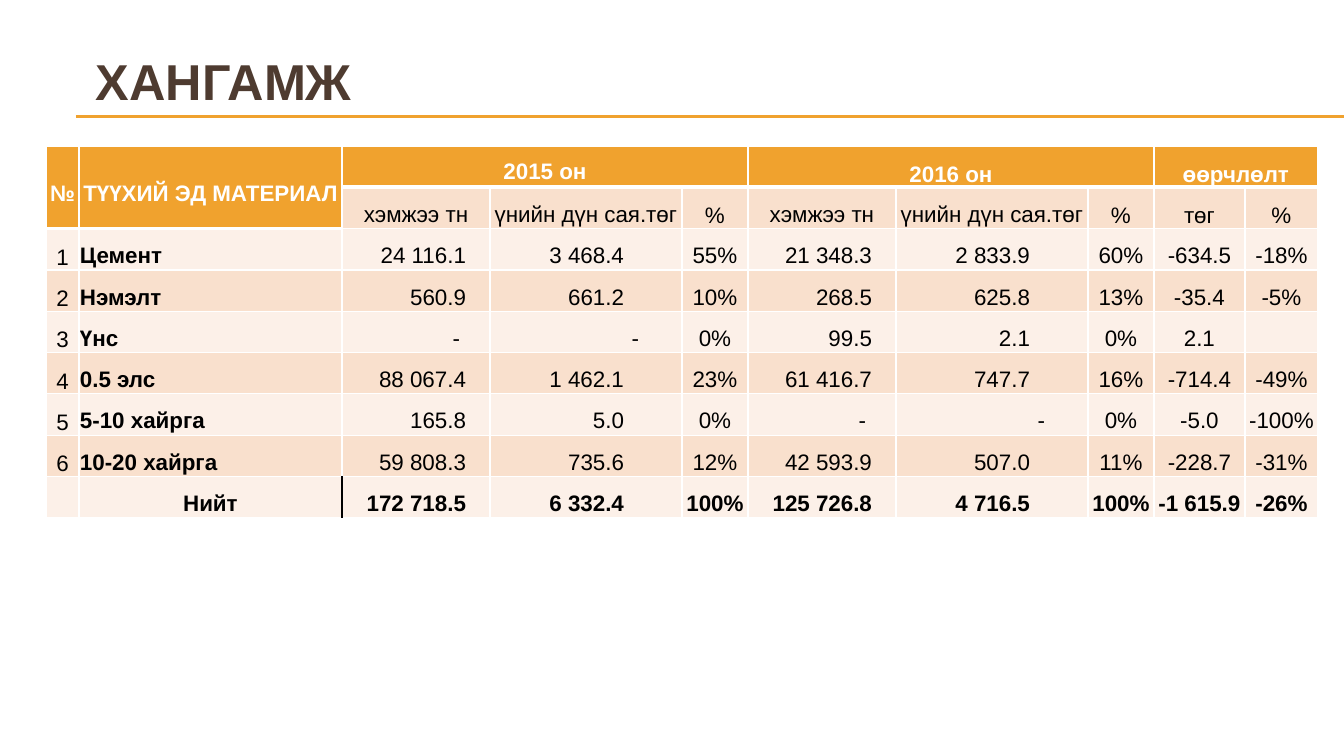
from typing import NamedTuple

from lxml.etree import SubElement
from pptx import Presentation
from pptx.dml.color import RGBColor
from pptx.enum.shapes import MSO_CONNECTOR
from pptx.enum.text import MSO_ANCHOR as ANCHOR, PP_ALIGN as ALIGN
from pptx.oxml.ns import qn
from pptx.util import Pt

EMU_PER_PX = 914400 / 100.8
FONT = "Arial"
ORANGE, PEACH, CREAM = "F0A22E", "F9E0CD", "FCF0E8"
WHITE, BLACK, BROWN = "FFFFFF", "000000", "4E3B30"

COL_WIDTHS = [33, 263, 148, 192, 66, 148, 192, 66, 91, 73]
ROW_HEIGHT = 41
TABLE_LEFT, TABLE_TOP = 46, 146
NAME_COL = 1
# Right margins of the figure columns, for numbers and for dashes
QUANTITY_MARGINS, AMOUNT_MARGINS = (24, 30), (58, 43)
FIGURE_MARGINS = {2: QUANTITY_MARGINS, 3: AMOUNT_MARGINS,
                  5: QUANTITY_MARGINS, 6: AMOUNT_MARGINS}


class Header(NamedTuple):
    text: str
    col: int
    rows: int
    cols: int
    anchor: ANCHOR


class Material(NamedTuple):
    number: str
    name: str
    figures: list[str]


class Rule(NamedTuple):
    left: int
    right: int
    y: int


HEADERS = [
    Header("№", 0, 2, 1, ANCHOR.MIDDLE),
    Header("ТҮҮХИЙ ЭД МАТЕРИАЛ", 1, 2, 1, ANCHOR.MIDDLE),
    Header("2015 он", 2, 1, 3, ANCHOR.TOP),
    Header("2016 он", 5, 1, 3, ANCHOR.BOTTOM),
    Header("өөрчлөлт", 8, 1, 2, ANCHOR.BOTTOM),
]
YEAR_HEADERS = ["хэмжээ тн", "үнийн дүн сая.төг", "%"]
SUBHEADERS = YEAR_HEADERS * 2 + ["төг", "%"]
MATERIALS = [
    Material("1", "Цемент", ["24 116.1", "3 468.4", "55%", "21 348.3", "2 833.9", "60%", "-634.5", "-18%"]),
    Material("2", "Нэмэлт", ["560.9", "661.2", "10%", "268.5", "625.8", "13%", "-35.4", "-5%"]),
    Material("3", "Үнс", ["-", "-", "0%", "99.5", "2.1", "0%", "2.1", ""]),
    Material("4", "0.5 элс", ["88 067.4", "1 462.1", "23%", "61 416.7", "747.7", "16%", "-714.4", "-49%"]),
    Material("5", "5-10 хайрга", ["165.8", "5.0", "0%", "-", "-", "0%", "-5.0", "-100%"]),
    Material("6", "10-20 хайрга", ["59 808.3", "735.6", "12%", "42 593.9", "507.0", "11%", "-228.7", "-31%"]),
    Material("", "Нийт", ["172 718.5", "6 332.4", "100%", "125 726.8", "4 716.5", "100%", "-1 615.9", "-26%"]),
]
RULES = [Rule(76, 1344, 116), Rule(76, 1344, 117)]
TOTAL_ROW = len(MATERIALS) + 1


def px(n: int) -> int:
    return round(n * EMU_PER_PX)


def rgb(color: str) -> RGBColor:
    return RGBColor.from_string(color)


def format_run(p, size: int, color: str, bold: bool) -> None:
    for r in p.runs:
        r.font.name, r.font.size, r.font.bold = FONT, Pt(size), bold
        r.font.color.rgb = rgb(color)


def draw_rule(slide, rule: Rule) -> None:
    line = slide.shapes.add_connector(
        MSO_CONNECTOR.STRAIGHT, px(rule.left), px(rule.y), px(rule.right), px(rule.y))
    line.line.color.rgb = rgb(ORANGE)
    line.line.width = Pt(0.75)
    SubElement(line._element.spPr, qn("a:effectLst"))


def draw_title(slide, text: str) -> None:
    tf = slide.shapes.add_textbox(px(86), px(34), px(1258), px(93)).text_frame
    tf.word_wrap = True
    tf.vertical_anchor = ANCHOR.MIDDLE
    tf.text = text
    format_run(tf.paragraphs[0], 36, BROWN, True)


def set_borders(cell, row: int, col: int) -> None:
    """White grid, thick under the header, black before the total's figures."""
    under_header = 1 if col <= NAME_COL else 0
    edges = {
        "lnL": (BLACK if (row, col) == (TOTAL_ROW, NAME_COL + 1) else WHITE, 1),
        "lnR": (BLACK if (row, col) == (TOTAL_ROW, NAME_COL) else WHITE, 1),
        "lnT": (WHITE, 3 if row == under_header + 1 else 1),
        "lnB": (WHITE, 3 if row <= under_header else 1),
    }
    tc_pr = cell._tc.get_or_add_tcPr()
    for tag, (color, width) in edges.items():
        ln = SubElement(tc_pr, qn(f"a:{tag}"), w=str(Pt(width)))
        SubElement(SubElement(ln, qn("a:solidFill")), qn("a:srgbClr"), val=color)


def fill_cell(cell, text: str, color: str = BLACK, bold: bool = False,
              align: ALIGN = ALIGN.CENTER, anchor: ANCHOR = ANCHOR.MIDDLE,
              right: int = 1) -> None:
    cell.margin_left = cell.margin_top = px(1)
    cell.margin_right, cell.margin_bottom = px(right), 0
    cell.vertical_anchor = anchor
    cell.text = text
    p = cell.text_frame.paragraphs[0]
    p.alignment, p.line_spacing = align, 1.5
    format_run(p, 16, color, bold)


def draw_material(table, row: int, material: Material) -> None:
    total = row == TOTAL_ROW
    fill_cell(table.cell(row, 0), material.number, anchor=ANCHOR.BOTTOM)
    fill_cell(table.cell(row, NAME_COL), material.name, bold=True,
              align=ALIGN.CENTER if total else ALIGN.LEFT)
    for col, text in enumerate(material.figures, NAME_COL + 1):
        cell = table.cell(row, col)
        if col in FIGURE_MARGINS:
            number, dash = FIGURE_MARGINS[col]
            fill_cell(cell, text, bold=total, align=ALIGN.RIGHT,
                      right=dash if text == "-" else number)
        else:
            fill_cell(cell, text, bold=total)


def draw_table(slide) -> None:
    n_rows = TOTAL_ROW + 1
    table = slide.shapes.add_table(
        n_rows, len(COL_WIDTHS), px(TABLE_LEFT), px(TABLE_TOP),
        px(sum(COL_WIDTHS)), px(n_rows * ROW_HEIGHT)).table
    table.first_row = table.horz_banding = False
    for column, width in zip(table.columns, COL_WIDTHS):
        column.width = px(width)
    for i, row in enumerate(table.rows):
        row.height = px(ROW_HEIGHT)
        for j, cell in enumerate(row.cells):
            set_borders(cell, i, j)
            in_header = i == 0 or (i == 1 and j <= NAME_COL)
            cell.fill.solid()
            cell.fill.fore_color.rgb = rgb(ORANGE if in_header else PEACH if i % 2 else CREAM)
    for header in HEADERS:
        cell = table.cell(0, header.col)
        cell.merge(table.cell(header.rows - 1, header.col + header.cols - 1))
        fill_cell(cell, header.text, WHITE, True, anchor=header.anchor)
    for col, text in enumerate(SUBHEADERS, NAME_COL + 1):
        anchor = ANCHOR.MIDDLE if col in FIGURE_MARGINS else ANCHOR.BOTTOM
        fill_cell(table.cell(1, col), text, anchor=anchor)
    for row, material in enumerate(MATERIALS, 2):
        draw_material(table, row, material)


def main() -> None:
    prs = Presentation()
    prs.slide_width, prs.slide_height = px(1344), px(756)
    slide = prs.slides.add_slide(prs.slide_layouts[6])
    for rule in RULES:
        draw_rule(slide, rule)
    draw_title(slide, "ХАНГАМЖ")
    draw_table(slide)
    prs.save("out.pptx")


if __name__ == "__main__":
    main()
